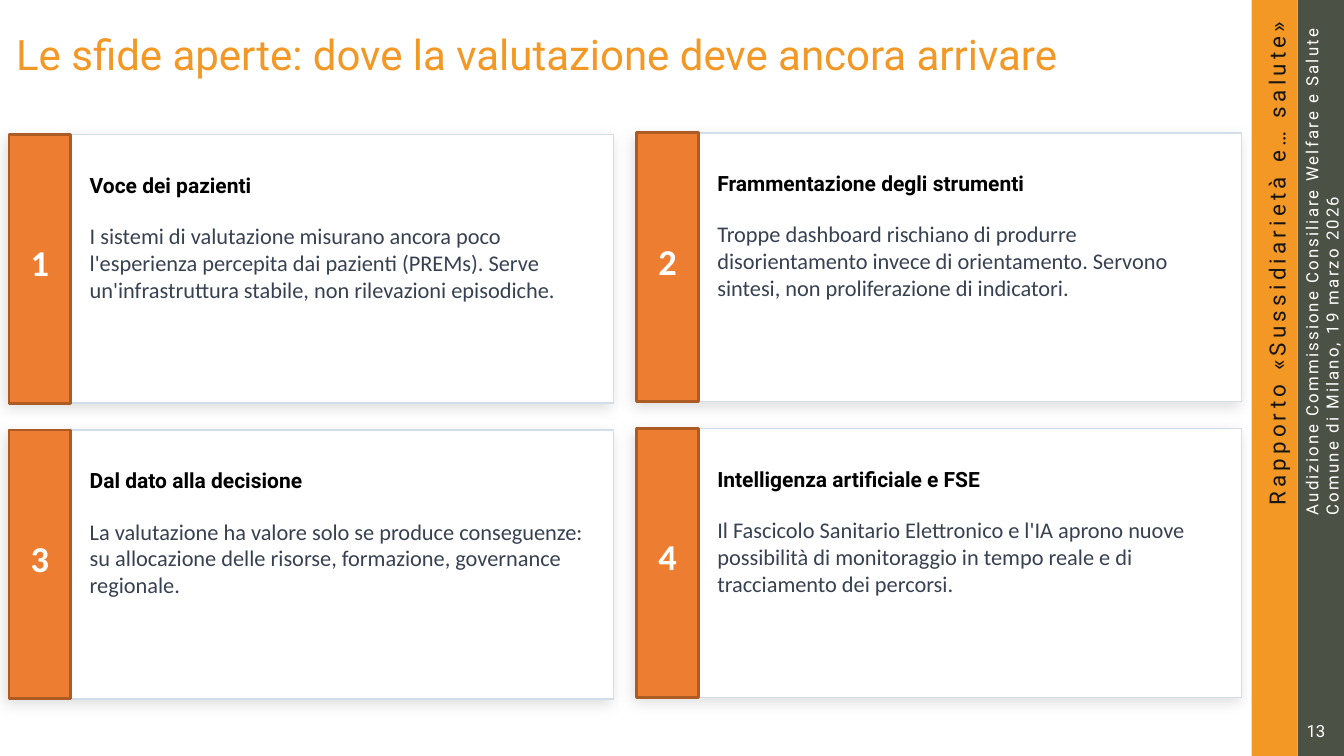
from lxml.etree import SubElement
from pptx import Presentation
from pptx.dml.color import RGBColor
from pptx.enum.shapes import MSO_SHAPE as Shape
from pptx.enum.text import MSO_ANCHOR as Anchor, PP_ALIGN as Align
from pptx.oxml.ns import qn
from pptx.util import Pt

TITLE = "Le sfide aperte: dove la valutazione deve ancora arrivare"
REPORT = "Rapporto «Sussidiarietà e… salute»"
EVENT = [
    "Audizione Commissione Consiliare Welfare e Salute",
    "Comune di Milano, 19 marzo 2026",
]
PAGE_NUMBER = "13"
CHALLENGES = [
    ("Voce dei pazienti",
     "I sistemi di valutazione misurano ancora poco l'esperienza percepita dai pazienti (PREMs). "
     "Serve un'infrastruttura stabile, non rilevazioni episodiche."),
    ("Frammentazione degli strumenti",
     "Troppe dashboard rischiano di produrre disorientamento invece di orientamento. "
     "Servono sintesi, non proliferazione di indicatori."),
    ("Dal dato alla decisione",
     "La valutazione ha valore solo se produce conseguenze: "
     "su allocazione delle risorse, formazione, governance regionale."),
    ("Intelligenza artificiale e FSE",
     "Il Fascicolo Sanitario Elettronico e l'IA aprono nuove possibilità "
     "di monitoraggio in tempo reale e di tracciamento dei percorsi."),
]
COLORS = {
    "amber": "F39824", "olive": "4C5145", "ink": "151515", "white": "FFFFFF",
    "black": "000000", "slate": "374151", "orange": "ED7D31", "rust": "AD5B24",
    "border": "D1DDE8",
}
PAGE_WIDTH, PAGE_HEIGHT = 960, 540
BAND_LEFT, BAND_WIDTH = 894, 33
CARD_LEFT, CARD_TOP = 6.5, 96
CARD_WIDTH, CARD_HEIGHT, TAB_WIDTH = 432, 192, 44
COLUMN_STEP, ROW_STEP, COLUMN_RISE = 448.3, 211.2, 1.1


def color(name):
    return RGBColor.from_string(COLORS[name])


def add_block(page, left, top, width, height, fill, line=None, line_width=1):
    block = page.shapes.add_shape(Shape.RECTANGLE, Pt(left), Pt(top), Pt(width), Pt(height))
    block.fill.solid()
    block.fill.fore_color.rgb = color(fill)
    if line:
        block.line.color.rgb = color(line)
        block.line.width = Pt(line_width)
    else:
        block.line.fill.background()
    block.shadow.inherit = False
    return block


def add_soft_shadow(block):
    effects = block._element.spPr.find(qn("a:effectLst"))
    shadow = SubElement(effects, qn("a:outerShdw"), blurRad=str(Pt(10)), dist=str(Pt(4)),
                        dir=str(135 * 60000), algn="bl", rotWithShape="0")
    tint = SubElement(shadow, qn("a:srgbClr"), val=COLORS["black"])
    SubElement(tint, qn("a:alpha"), val="12000")


def add_text(page, left, top, width, height, lines, size, fill, font="Roboto", bold=False,
             align=Align.LEFT, anchor=Anchor.MIDDLE, spacing=0, rotation=0, inset=0, wrap=True):
    box = page.shapes.add_textbox(Pt(left), Pt(top), Pt(width), Pt(height))
    box.rotation = rotation
    frame = box.text_frame
    frame.word_wrap = wrap
    frame.vertical_anchor = anchor
    frame.margin_left = frame.margin_right = Pt(inset)
    frame.margin_top = frame.margin_bottom = Pt(inset)
    for index, line in enumerate(lines):
        para = frame.add_paragraph() if index else frame.paragraphs[0]
        para.alignment = align
        span = para.add_run()
        span.text = line
        span.font.name = font
        span.font.size = Pt(size)
        span.font.bold = bold
        span.font.color.rgb = color(fill)
        if spacing:
            span._r.get_or_add_rPr().set("spc", str(int(spacing * 100)))


def add_card(page, left, top, number, heading, body):
    add_soft_shadow(add_block(page, left, top, CARD_WIDTH, CARD_HEIGHT, "white", "border"))
    add_block(page, left, top, TAB_WIDTH, CARD_HEIGHT, "orange", "rust", 2)
    add_text(page, left + 5, top + 77.5, 34, 27.5, [str(number)], 26, "white",
             "Calibri", True, Align.CENTER)
    add_text(page, left + 57.6, top + 27, 360, 18, [heading], 15, "black", bold=True)
    add_text(page, left + 57.6, top + 62.6, 360, 56, [body], 16, "slate",
             "Calibri", anchor=Anchor.TOP)


def main():
    deck = Presentation()
    deck.slide_width, deck.slide_height = Pt(PAGE_WIDTH), Pt(PAGE_HEIGHT)
    page = deck.slides.add_slide(deck.slide_layouts[6])

    for index, fill in enumerate(("amber", "olive")):
        add_block(page, BAND_LEFT + index * BAND_WIDTH, 0, BAND_WIDTH, PAGE_HEIGHT, fill)
    add_text(page, 676, 242, 472, 19, [REPORT], 16, "ink",
             align=Align.RIGHT, spacing=3, rotation=270)
    add_text(page, 730, 139.7, 428.4, 28, EVENT, 12, "white", spacing=1.5, rotation=270)
    add_text(page, 11.5, -29.5, 794, 135.4, [TITLE], 30, "amber")
    add_text(page, 928.8, 511.2, 21.6, 21, [PAGE_NUMBER], 12, "white",
             align=Align.RIGHT, inset=3.6, wrap=False)

    for index, (heading, body) in enumerate(CHALLENGES):
        row, column = divmod(index, 2)
        left = CARD_LEFT + column * COLUMN_STEP
        top = CARD_TOP + row * ROW_STEP - column * COLUMN_RISE
        add_card(page, left, top, index + 1, heading, body)

    deck.save("out.pptx")


if __name__ == "__main__":
    main()
